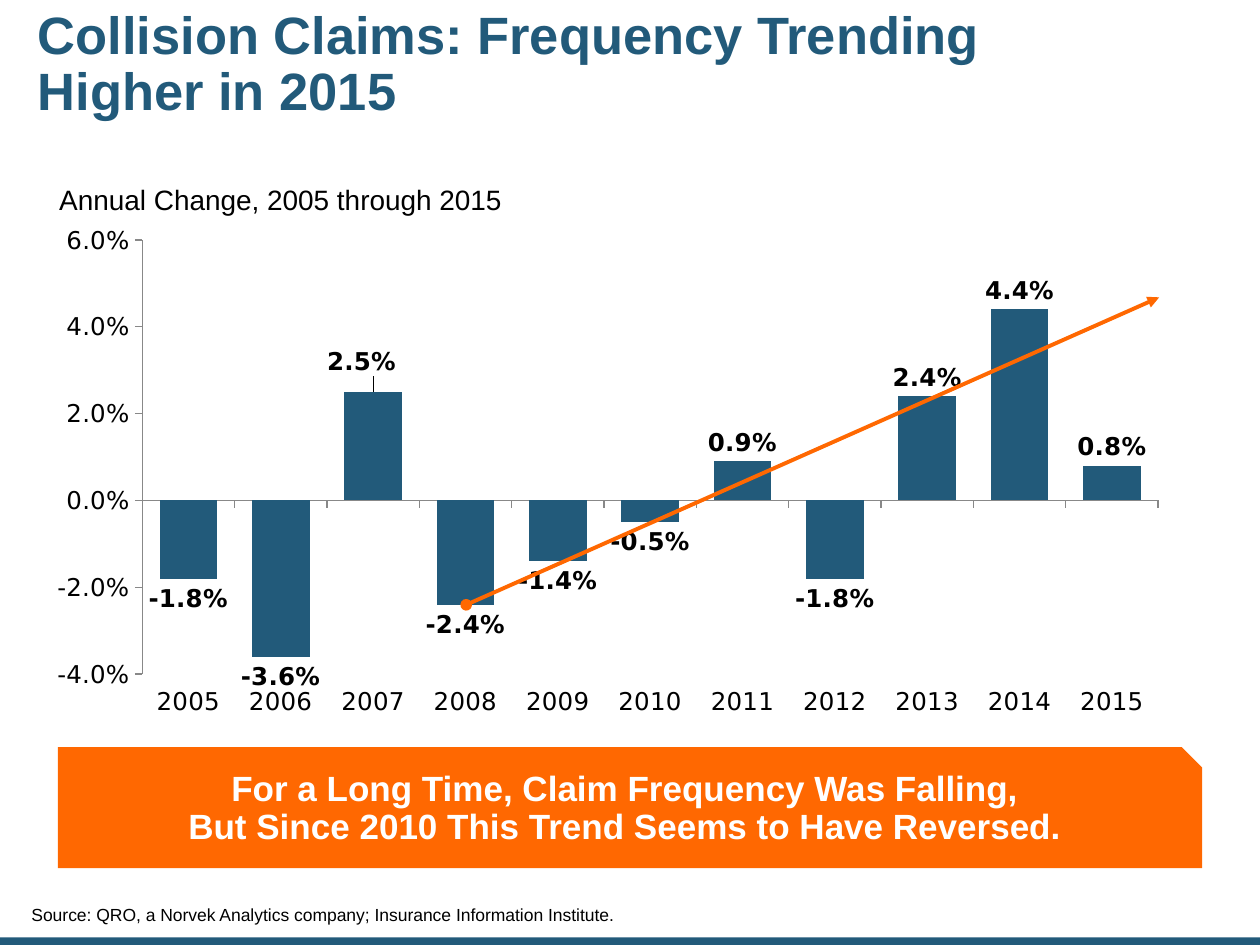
from copy import deepcopy
from pptx import Presentation
from pptx import util as u
from pptx.chart import data as cd
from pptx.dml.color import RGBColor
from pptx.enum import chart as ch, shapes, text
from pptx.oxml import parse_xml
from pptx.oxml.ns import nsdecls, qn

HUES = {"blue": "225A7A", "orange": "FF6801", "black": "000000",
        "white": "FFFFFF", "grey": "888888"}
FONT = "Arial"
RATES = {2005: -0.018, 2006: -0.036, 2007: 0.025, 2008: -0.024,
         2009: -0.014, 2010: -0.005, 2011: 0.009, 2012: -0.018,
         2013: 0.024, 2014: 0.044, 2015: 0.008}


def rgb(name):
    return RGBColor.from_string(HUES[name])


def place(shape, box):
    shape.left, shape.top, shape.width, shape.height = map(u.Inches, box)


def paint(shape, hue):
    shape.fill.solid()
    shape.fill.fore_color.rgb = rgb(hue)
    shape.line.fill.background()
    shape.shadow.inherit = False


def write(shape, lines, size, hue, bold=False, anchor="TOP", align="LEFT",
          pad=(0.05, 0.05, 0.05, 0.05)):
    frame = shape.text_frame
    frame.word_wrap = True
    frame.auto_size = text.MSO_AUTO_SIZE.NONE
    frame.vertical_anchor = text.MSO_ANCHOR[anchor]
    (frame.margin_left, frame.margin_top,
     frame.margin_right, frame.margin_bottom) = map(u.Inches, pad)
    para = frame.paragraphs[0]
    para.alignment = text.PP_ALIGN[align]
    para.line_spacing = 0.9
    para.space_before = u.Pt(0)
    for i, line in enumerate(lines):
        if i:
            para.add_line_break()
        run = para.add_run()
        run.text = line
        font = run.font
        font.name, font.size, font.bold = FONT, u.Pt(size), bold
        font.color.rgb = rgb(hue)


def add_title(slide, box):
    title = slide.shapes.title
    place(title, box)
    write(title, ["Collision Claims: Frequency Trending", "Higher in 2015"],
          30, "blue", True, "MIDDLE")


def add_note(slide, box, line, size, **opts):
    note = slide.shapes.add_textbox(*map(u.Inches, box))
    write(note, [line], size, "black", **opts)


def add_bar(slide, box):
    bar = slide.shapes.add_shape(shapes.MSO_SHAPE.RECTANGLE,
                                 *map(u.Inches, box))
    paint(bar, "blue")


def add_banner(slide, box):
    banner = slide.shapes.add_shape(shapes.MSO_SHAPE.SNIP_1_RECTANGLE,
                                    *map(u.Inches, box))
    paint(banner, "orange")
    write(banner, ["For a Long Time, Claim Frequency Was Falling,",
                   "But Since 2010 This Trend Seems to Have Reversed."],
          20, "white", True, "MIDDLE", "CENTER", (0.1, 0.05, 0.1, 0.1))


def set_plot(chart, x, y, w, h):
    """Fix the inner plot area as fractions of the chart."""
    area = chart.element.find(".//" + qn("c:plotArea"))
    old = area.find(qn("c:layout"))
    if old is not None:
        area.remove(old)
    area.insert(0, parse_xml(
        f'<c:layout {nsdecls("c")}><c:manualLayout>'
        '<c:layoutTarget val="inner"/>'
        '<c:xMode val="edge"/><c:yMode val="edge"/>'
        f'<c:x val="{x}"/><c:y val="{y}"/><c:w val="{w}"/><c:h val="{h}"/>'
        '</c:manualLayout></c:layout>'))


def shift_label(labels, index, x, y):
    """Move one data label by fractions of the chart."""
    root = labels.font and labels._element
    one = parse_xml(
        f'<c:dLbl {nsdecls("c")}><c:idx val="{index}"/>'
        f'<c:layout><c:manualLayout><c:x val="{x}"/><c:y val="{y}"/>'
        '</c:manualLayout></c:layout></c:dLbl>')
    for part in root:
        one.append(deepcopy(part))
    root.insert(0, one)


def add_rates(slide, box):
    data = cd.CategoryChartData(number_format="0.0%")
    data.categories = [str(year) for year in RATES]
    data.add_series("Series 1", RATES.values())
    chart = slide.shapes.add_chart(ch.XL_CHART_TYPE.COLUMN_CLUSTERED,
                                   *map(u.Inches, box), data).chart
    chart.has_legend = chart.has_title = False
    chart.font.name, chart.font.size = "DejaVu Sans", u.Pt(14)
    chart.font.color.rgb = rgb("black")
    set_plot(chart, 0.087, 0.068, 0.889, 0.796)

    # Axes
    rates, years = chart.value_axis, chart.category_axis
    rates.minimum_scale, rates.maximum_scale = -0.04, 0.06
    rates.major_unit = 0.02
    rates.tick_labels.number_format = "0.0%"
    rates.tick_labels.number_format_is_linked = False
    years.tick_label_position = ch.XL_TICK_LABEL_POSITION.LOW
    for axis in (rates, years):
        axis.has_major_gridlines = False
        axis.major_tick_mark = ch.XL_TICK_MARK.OUTSIDE
        axis.format.line.color.rgb = rgb("grey")
        axis.format.line.width = u.Pt(0.75)

    # Columns and their labels
    plot = chart.plots[0]
    plot.gap_width, plot.vary_by_categories = 60, False
    series = plot.series[0]
    series.invert_if_negative = False
    series.format.fill.solid()
    series.format.fill.fore_color.rgb = rgb("blue")
    labels = series.data_labels
    labels.show_value = True
    labels.number_format, labels.number_format_is_linked = "0.0%", False
    labels.position = ch.XL_LABEL_POSITION.OUTSIDE_END
    font = labels.font
    font.name, font.size, font.bold = "DejaVu Sans", u.Pt(14), True
    font.color.rgb = rgb("black")
    shift_label(labels, list(RATES).index(2007), -0.01, -0.02)


def add_trend(slide, start, end):
    trend = slide.shapes.add_connector(shapes.MSO_CONNECTOR.STRAIGHT,
                                       *map(u.Inches, start + end))
    trend.line.color.rgb = rgb("orange")
    trend.line.width = u.Pt(2.25)
    line = trend.line._get_or_add_ln()
    for tag, kind in (("headEnd", "oval"), ("tailEnd", "triangle")):
        line.append(parse_xml(f'<a:{tag} {nsdecls("a")} type="{kind}"/>'))
    trend._element.spPr.append(parse_xml(f'<a:effectLst {nsdecls("a")}/>'))


def main():
    deck = Presentation()
    deck.slide_width, deck.slide_height = u.Inches(10), u.Inches(7.5)
    slide = deck.slides.add_slide(deck.slide_layouts[5])
    add_bar(slide, (0, 7.44, 10, 0.06))
    add_title(slide, (0.25, 0, 9.25, 1.04))
    add_note(slide, (0.42, 1.43, 9.25, 0.43),
             "Annual Change, 2005 through 2015", 16)
    add_note(slide, (0.25, 6.89, 8.4, 0.45),
             "Source: QRO, a Norvek Analytics company; "
             "Insurance Information Institute.",
             10, anchor="BOTTOM", pad=(0, 0, 0, 0))
    add_banner(slide, (0.46, 5.93, 9.08, 0.96))
    add_rates(slide, (0.34, 1.61, 9.07, 4.33))
    add_trend(slide, (3.7, 4.8), (9.2, 2.36))
    deck.save("out.pptx")


if __name__ == "__main__":
    main()
